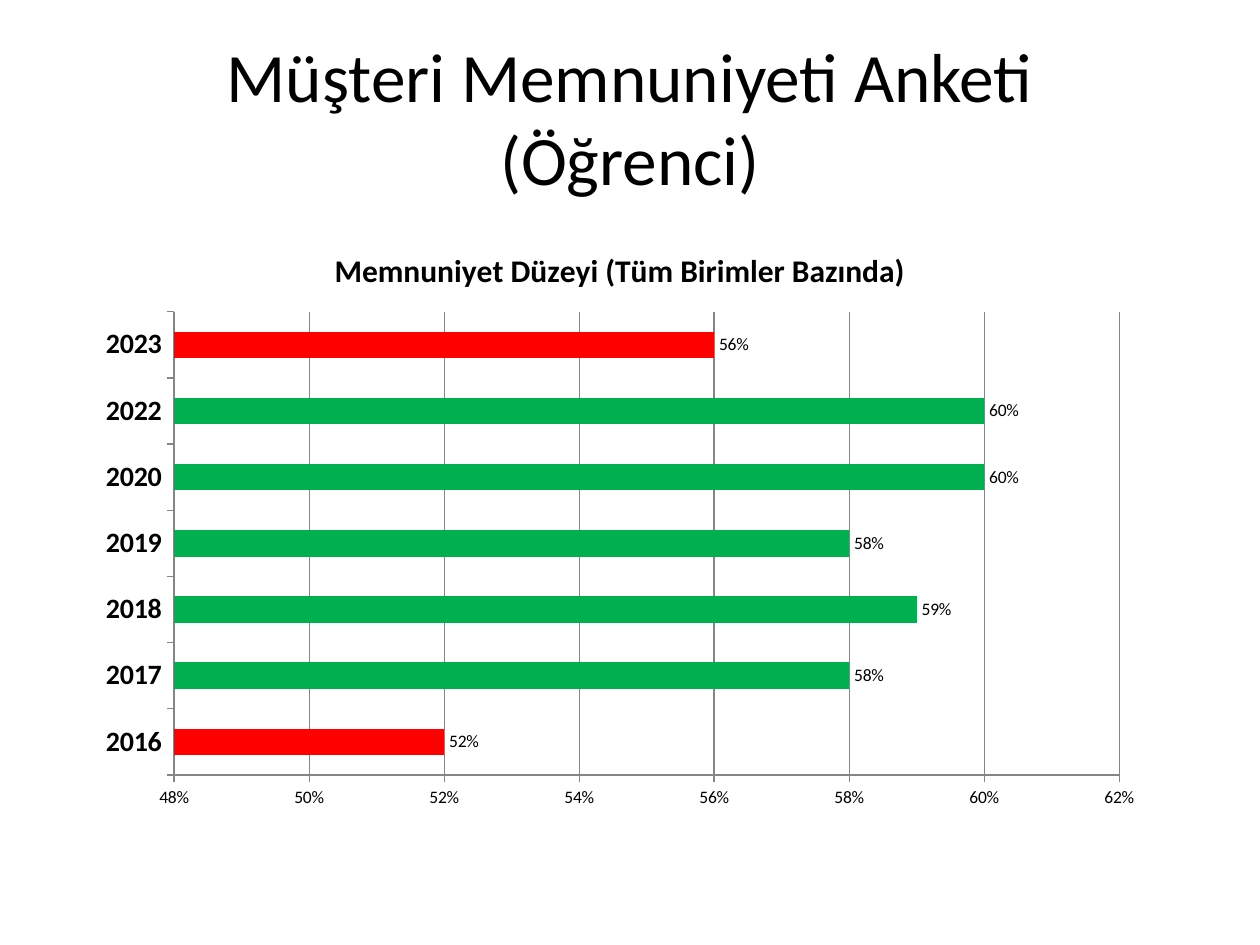
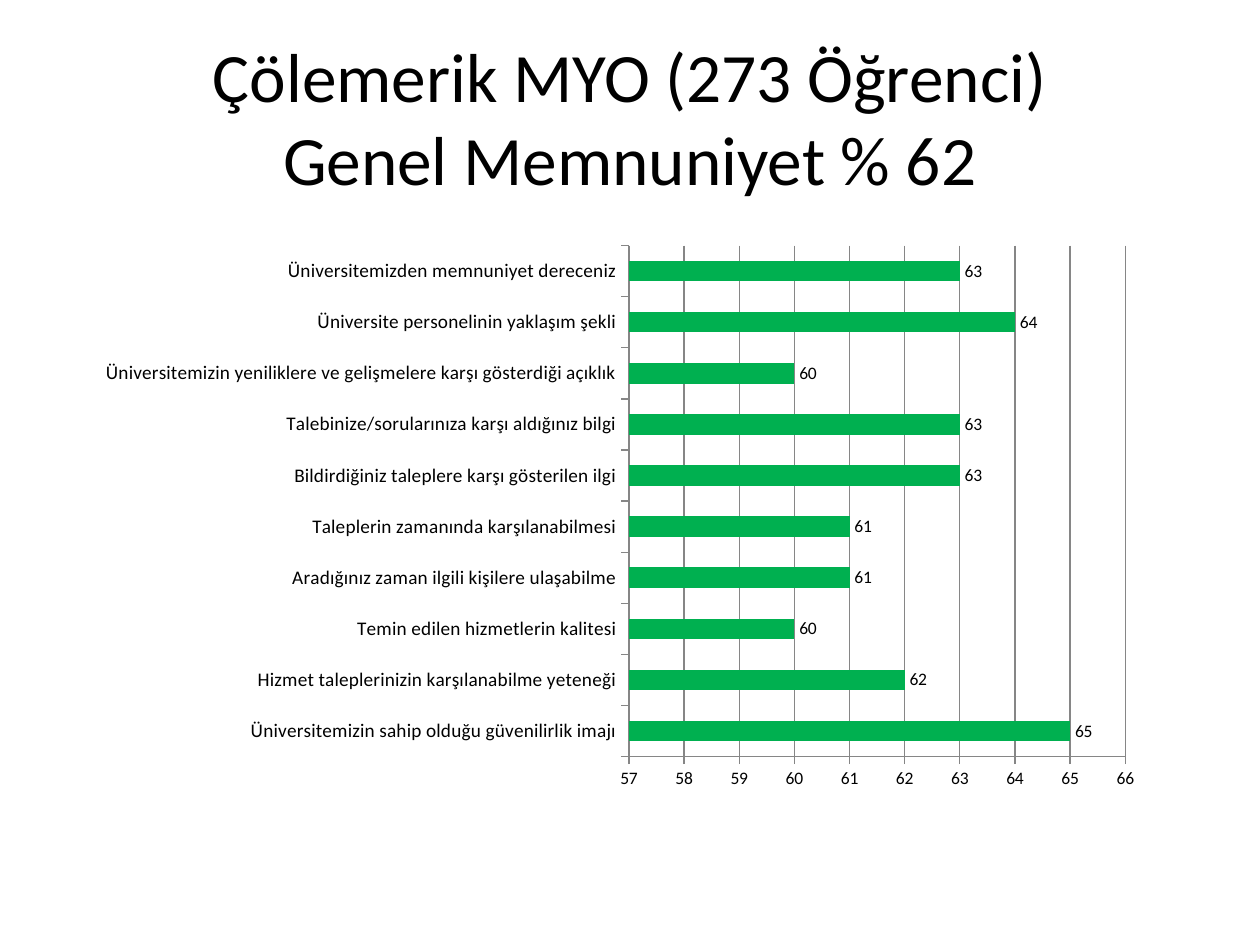
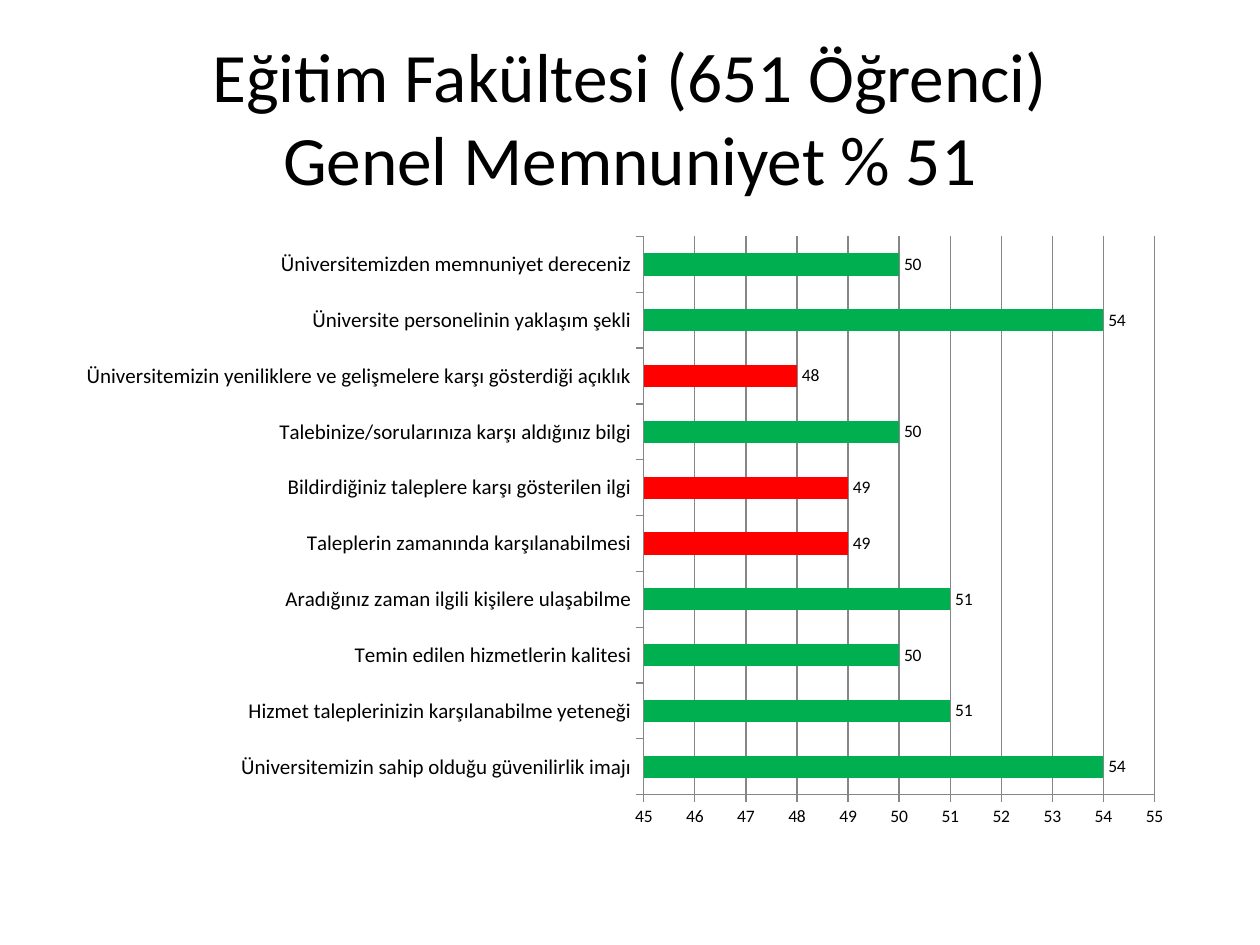
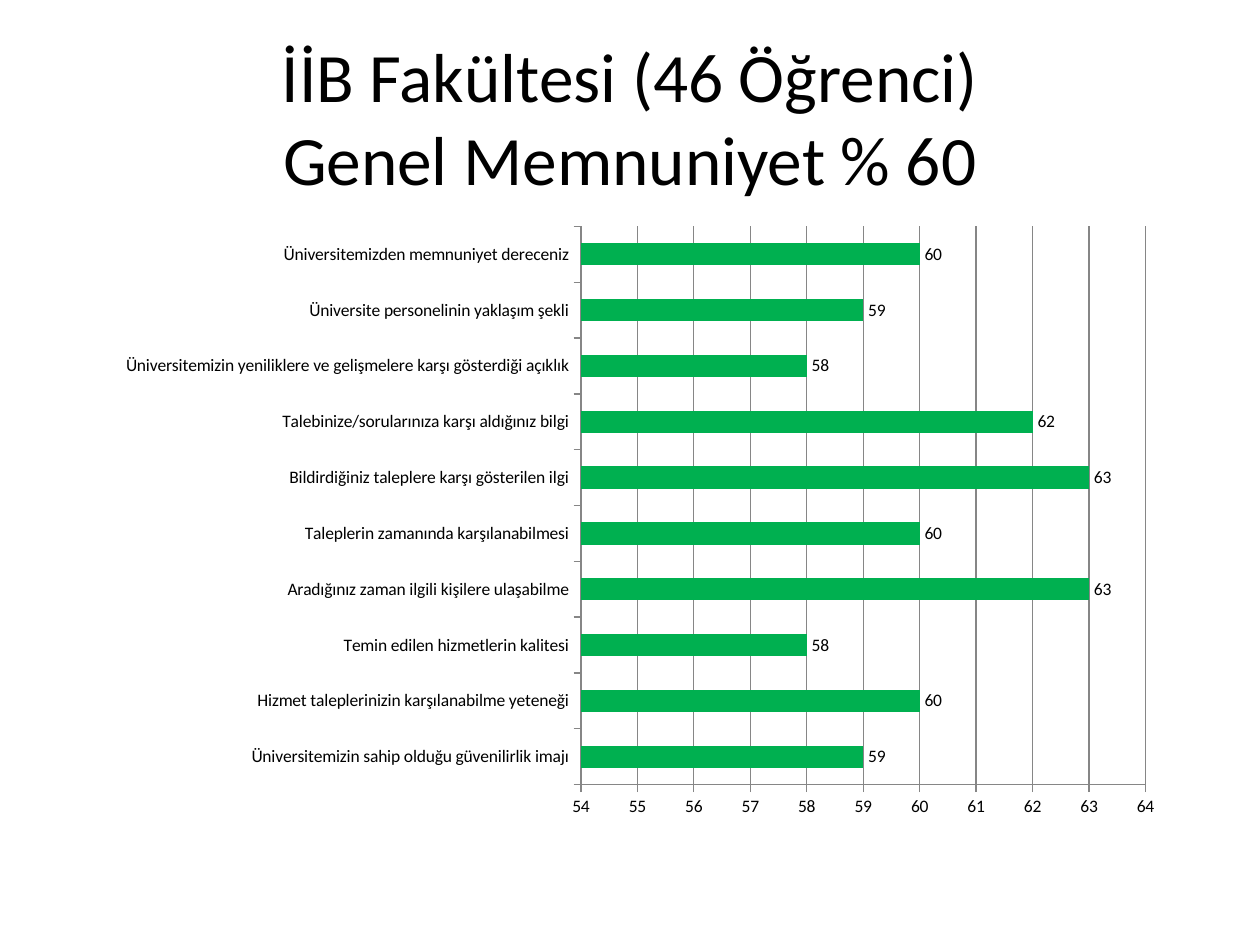
from pptx import Presentation
from pptx.chart.data import CategoryChartData
from pptx.dml.color import RGBColor
from pptx.enum.chart import XL_CHART_TYPE, XL_LABEL_POSITION, XL_TICK_MARK
from pptx.enum.text import MSO_ANCHOR, PP_ALIGN
from pptx.util import Pt

PX = 9144  # 100 px to the inch
FONT = "Calibri"
COLORS = {"text": "000000", "good": "00B050", "weak": "FF0000", "line": "868686"}
TITLE_BOX = (50, 30, 900, 125)

QUESTIONS = [
    "Üniversitemizin sahip olduğu güvenilirlik imajı",
    "Hizmet taleplerinizin karşılanabilme yeteneği",
    "Temin edilen hizmetlerin kalitesi",
    "Aradığınız zaman ilgili kişilere ulaşabilme",
    "Taleplerin zamanında karşılanabilmesi",
    "Bildirdiğiniz taleplere karşı gösterilen ilgi",
    "Talebinize/sorularınıza karşı aldığınız bilgi",
    "Üniversitemizin yeniliklere ve gelişmelere karşı gösterdiği açıklık",
    "Üniversite personelinin yaklaşım şekli",
    "Üniversitemizden memnuniyet dereceniz",
]

# Settings of the unit slides; the yearly slide overrides some of them
UNIT_CHART = {
    "categories": QUESTIONS, "number_format": "0", "step": 1,
    "weak_below": 50, "category_font": {"size": Pt(10), "bold": False},
    "series_name": "Series 1", "chart_title": None,
}
SLIDES = [
    {
        "title": ["Müşteri Memnuniyeti Anketi", "(Öğrenci)"],
        "box": (67, 178, 850, 472),
        "categories": ["2016", "2017", "2018", "2019", "2020", "2022", "2023"],
        "values": [0.52, 0.58, 0.59, 0.58, 0.6, 0.6, 0.56],
        "range": (0.48, 0.62), "step": 0.02, "number_format": "0%",
        "weak_below": 0.57,
        "category_font": {"size": Pt(16), "bold": True},
        "series_name": "Memnuniyet Düzeyi (Tüm Birimler Bazında)",
        "chart_title": "Memnuniyet Düzeyi (Tüm Birimler Bazında)",
    },
    {
        "title": ["Çölemerik MYO (273 Öğrenci)", "Genel Memnuniyet % 62"],
        "box": (67, 186, 850, 449),
        "values": [65, 62, 60, 61, 61, 63, 63, 60, 64, 63],
        "range": (57, 66),
        "category_font": {"size": Pt(11), "bold": False},
    },
    {
        "title": ["Eğitim Fakültesi (651 Öğrenci)", "Genel Memnuniyet % 51"],
        "box": (51, 178, 890, 488),
        "values": [54, 51, 50, 51, 49, 49, 50, 48, 54, 50],
        "range": (45, 55),
        "category_font": {"size": Pt(12), "bold": False},
    },
    {
        "title": ["İİB Fakültesi (46 Öğrenci)", "Genel Memnuniyet % 60"],
        "box": (83, 170, 850, 488),
        "values": [59, 60, 58, 63, 60, 63, 62, 58, 59, 60],
        "range": (54, 64),
    },
]


def color(name):
    return RGBColor.from_string(COLORS[name])


def emu(box):
    return [length * PX for length in box]


def apply(target, **settings):
    for name, value in settings.items():
        setattr(target, name, value)


def style_font(font, **settings):
    apply(font, name=FONT, **settings)
    font.color.rgb = color("text")


def style_line(line):
    line.color.rgb = color("line")
    line.width = Pt(0.75)


def add_title(slide, box, lines):
    frame = slide.shapes.add_textbox(*emu(box)).text_frame
    apply(frame, word_wrap=True, vertical_anchor=MSO_ANCHOR.MIDDLE)
    paragraph = frame.paragraphs[0]
    paragraph.alignment = PP_ALIGN.CENTER
    for index, line in enumerate(lines):
        if index:
            paragraph.add_line_break()
        run = paragraph.add_run()
        run.text = line
        style_font(run.font, size=Pt(39.6))


def style_axes(chart, settings):
    category_axis, value_axis = chart.category_axis, chart.value_axis
    for axis in (category_axis, value_axis):
        apply(axis, major_tick_mark=XL_TICK_MARK.OUTSIDE,
              minor_tick_mark=XL_TICK_MARK.NONE)
        style_line(axis.format.line)
    style_font(category_axis.tick_labels.font, **settings["category_font"])
    style_font(value_axis.tick_labels.font, size=Pt(10))

    minimum, maximum = settings["range"]
    apply(value_axis, minimum_scale=minimum, maximum_scale=maximum,
          major_unit=settings["step"], has_major_gridlines=True)
    style_line(value_axis.major_gridlines.format.line)
    apply(value_axis.tick_labels, number_format=settings["number_format"],
          number_format_is_linked=False)


def style_bars(chart, settings):
    plot = chart.plots[0]
    apply(plot, gap_width=150, vary_by_categories=False, has_data_labels=True)
    apply(plot.data_labels, show_value=True, position=XL_LABEL_POSITION.OUTSIDE_END,
          number_format=settings["number_format"], number_format_is_linked=False)
    style_font(plot.data_labels.font, size=Pt(10))

    series = plot.series[0]
    series.invert_if_negative = False
    series.format.fill.solid()
    series.format.fill.fore_color.rgb = color("good")
    for index, value in enumerate(settings["values"]):
        if value < settings["weak_below"]:
            fill = series.points[index].format.fill
            fill.solid()
            fill.fore_color.rgb = color("weak")


def add_bar_chart(slide, box, settings):
    data = CategoryChartData(number_format=settings["number_format"])
    data.categories = settings["categories"]
    data.add_series(settings["series_name"], settings["values"])
    chart = slide.shapes.add_chart(XL_CHART_TYPE.BAR_CLUSTERED, *emu(box), data).chart
    style_font(chart.font, size=Pt(10))
    apply(chart, has_legend=False, has_title=bool(settings["chart_title"]))
    if chart.has_title:
        frame = chart.chart_title.text_frame
        frame.text = settings["chart_title"]
        style_font(frame.paragraphs[0].runs[0].font, size=Pt(18), bold=True)
        chart.chart_title.include_in_layout = False
    style_axes(chart, settings)
    style_bars(chart, settings)


def main():
    presentation = Presentation()
    apply(presentation, slide_width=1000 * PX, slide_height=750 * PX)
    for content in SLIDES:
        settings = {**UNIT_CHART, **content}
        slide = presentation.slides.add_slide(presentation.slide_layouts[6])
        add_title(slide, TITLE_BOX, settings["title"])
        add_bar_chart(slide, settings["box"], settings)
    presentation.save("out.pptx")


if __name__ == "__main__":
    main()
